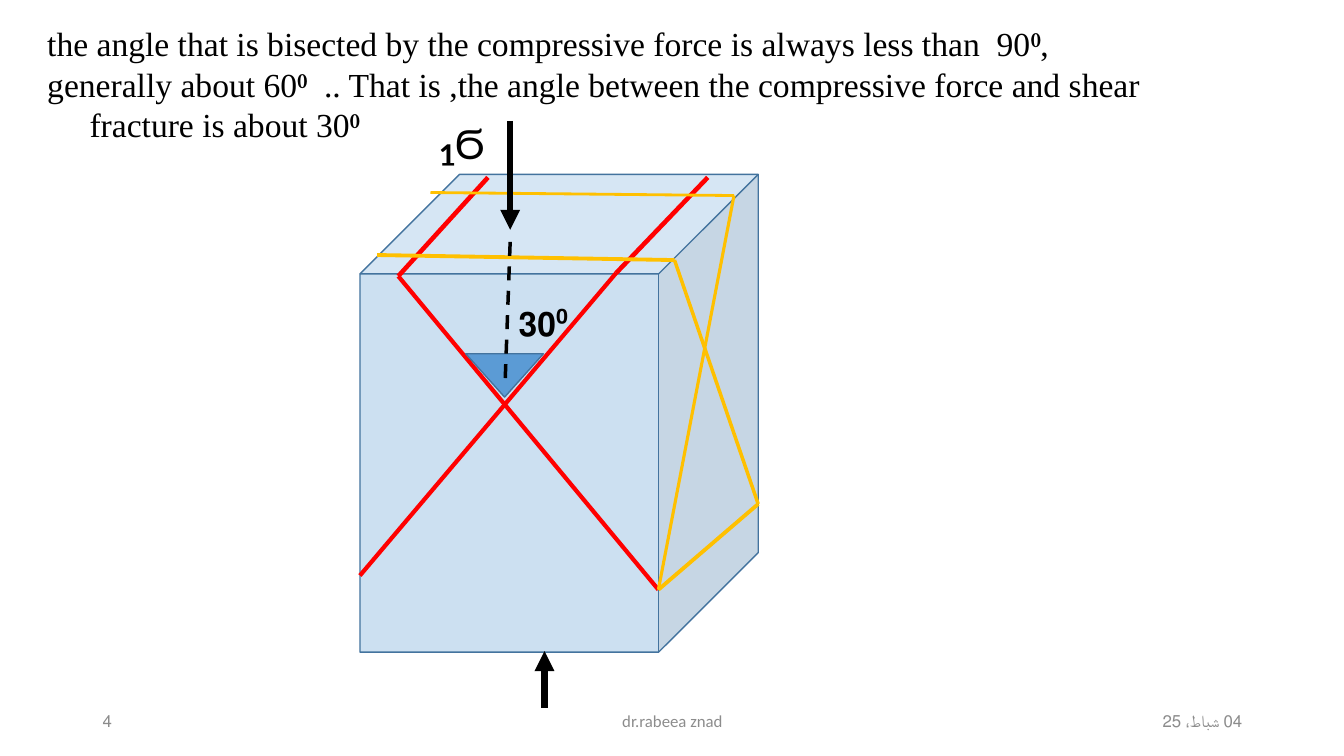
from itertools import pairwise

from lxml.etree import SubElement
from pptx import Presentation
from pptx.dml.color import RGBColor
from pptx.enum.dml import MSO_LINE
from pptx.enum.shapes import MSO_CONNECTOR, MSO_SHAPE
from pptx.enum.text import MSO_ANCHOR, PP_ALIGN
from pptx.oxml.ns import qn
from pptx.util import Inches, Pt

COLORS = {"block": "5B9BD5", "edge": "43739E", "red": "FF0000",
          "amber": "FFC000", "black": "000000", "footer": "8C8C8C"}
CELL = 0.1  # one grid column or row, in inches


class SlideBuilder:
    """Draws styled elements at grid columns and rows of one slide."""

    def __init__(self, slide):
        self.slide = slide

    def grid(self, *cells):
        return [Inches(cell * CELL) for cell in cells]

    def color(self, name):
        return RGBColor.from_string(COLORS[name])

    def shape(self, kind, box, opacity=None):
        shape = self.slide.shapes.add_shape(kind, *self.grid(*box))
        shape.shadow.inherit = False
        shape.fill.solid()
        shape.fill.fore_color.rgb = self.color("block")
        shape.line.color.rgb = self.color("edge")
        shape.line.width = Pt(1)
        if opacity:
            fill_color = shape.fill._xPr.find(qn("a:solidFill"))[0]
            SubElement(fill_color, qn("a:alpha"), val=str(opacity * 1000))

    def line(self, start, end, color, width, dash=None, arrow=False):
        connector = self.slide.shapes.add_connector(
            MSO_CONNECTOR.STRAIGHT, *self.grid(*start, *end))
        connector.line.color.rgb = self.color(color)
        connector.line.width = Pt(width)
        if dash:
            connector.line.dash_style = dash
        if arrow:
            SubElement(connector.line._get_or_add_ln(), qn("a:tailEnd"), type="triangle")
        SubElement(connector._element.spPr, qn("a:effectLst"))

    def polyline(self, points, color, widths):
        for (start, end), width in zip(pairwise(points), widths):
            self.line(start, end, color, width)

    def text(self, box, paragraphs, align, color="black", anchor=MSO_ANCHOR.TOP,
             right_to_left=True, hanging=0, margin_right=1, **font_format):
        frame = self.slide.shapes.add_textbox(*self.grid(*box)).text_frame
        frame.word_wrap = True
        frame.vertical_anchor = anchor
        frame.margin_right = self.grid(margin_right)[0]
        for index, runs in enumerate(paragraphs):
            paragraph = frame.add_paragraph() if index else frame.paragraphs[0]
            paragraph.alignment = align
            properties = paragraph._p.get_or_add_pPr()
            if right_to_left:
                properties.set("rtl", "1")
            if hanging:
                indent = self.grid(hanging)[0]
                properties.set("marL", str(indent))
                properties.set("indent", str(-indent))
            for content, size in runs:
                run = paragraph.add_run()
                run.text = content
                run.font.color.rgb = self.color(color)
                formats = {"name": "Calibri", "size": Pt(size), **font_format}
                for attribute, value in formats.items():
                    setattr(run.font, attribute, value)


def main():
    presentation = Presentation()
    presentation.slide_width, presentation.slide_height = Inches(13.33), Inches(7.5)
    builder = SlideBuilder(presentation.slides.add_slide(presentation.slide_layouts[6]))

    # Rock block
    builder.shape(MSO_SHAPE.CUBE, (35.7, 17.3, 39.5, 47.4), opacity=31)

    # Shear fractures: red across the front, amber across the side
    front_corner, side_corner = (65.3, 58.5), (75.2, 50)
    fractures = [
        ("red", [(48.4, 17.6), (39.5, 27.4), front_corner], [3.25, 3]),
        ("red", [(70.2, 17.6), (61.1, 27.1), (35.7, 57.1)], [3.25, 3]),
        ("amber", [(37.4, 25.3), (66.9, 25.8), side_corner], [2.75, 2.5]),
        ("amber", [(42.7, 19.1), (72.8, 19.4), front_corner, side_corner],
         [2, 2.25, 2.75]),
    ]
    for color, points, widths in fractures:
        builder.polyline(points, color, widths)

    # Compressive forces
    for start, end in [((50.6, 12), (50.6, 22.8)), ((54, 70.2), (54, 64.6))]:
        builder.line(start, end, "black", 4.75, arrow=True)
    builder.text((35.8, 9.2, 13.3, 8.4), [[("₁", 44), ("Ϭ", 32)]], PP_ALIGN.RIGHT)

    # Explanation
    builder.text(
        (3.7, 1.8, 110.6, 13.1),
        [[("the angle that is bisected by the compressive force is always "
           "less than  90⁰,", 24)],
         [("generally about 60⁰  .. That is ,the angle between the compressive "
           "force and shear fracture is about 30⁰", 24)]],
        PP_ALIGN.LEFT, right_to_left=False, hanging=4.2, margin_right=0,
        name="Times New Roman")

    # Angle between force and fracture
    builder.shape(MSO_SHAPE.FLOWCHART_MERGE, (46.2, 35.1, 7.7, 4.3))
    builder.line((50.6, 24), (50.1, 37.9), "black", 2.5, dash=MSO_LINE.DASH)
    builder.text((50.1, 29.6, 7.2, 5), [[("30⁰", 24)]], PP_ALIGN.RIGHT, bold=True)

    # Footer
    footer = [(94.2, 30, "04 شباط، 25", PP_ALIGN.RIGHT),
              (44.2, 45, "dr.rabeea znad", PP_ALIGN.CENTER),
              (9.2, 30, "4", PP_ALIGN.LEFT)]
    for left, width, content, align in footer:
        builder.text((left, 69.5, width, 4), [[(content, 12)]], align,
                     color="footer", anchor=MSO_ANCHOR.MIDDLE)

    presentation.save("out.pptx")


if __name__ == "__main__":
    main()
